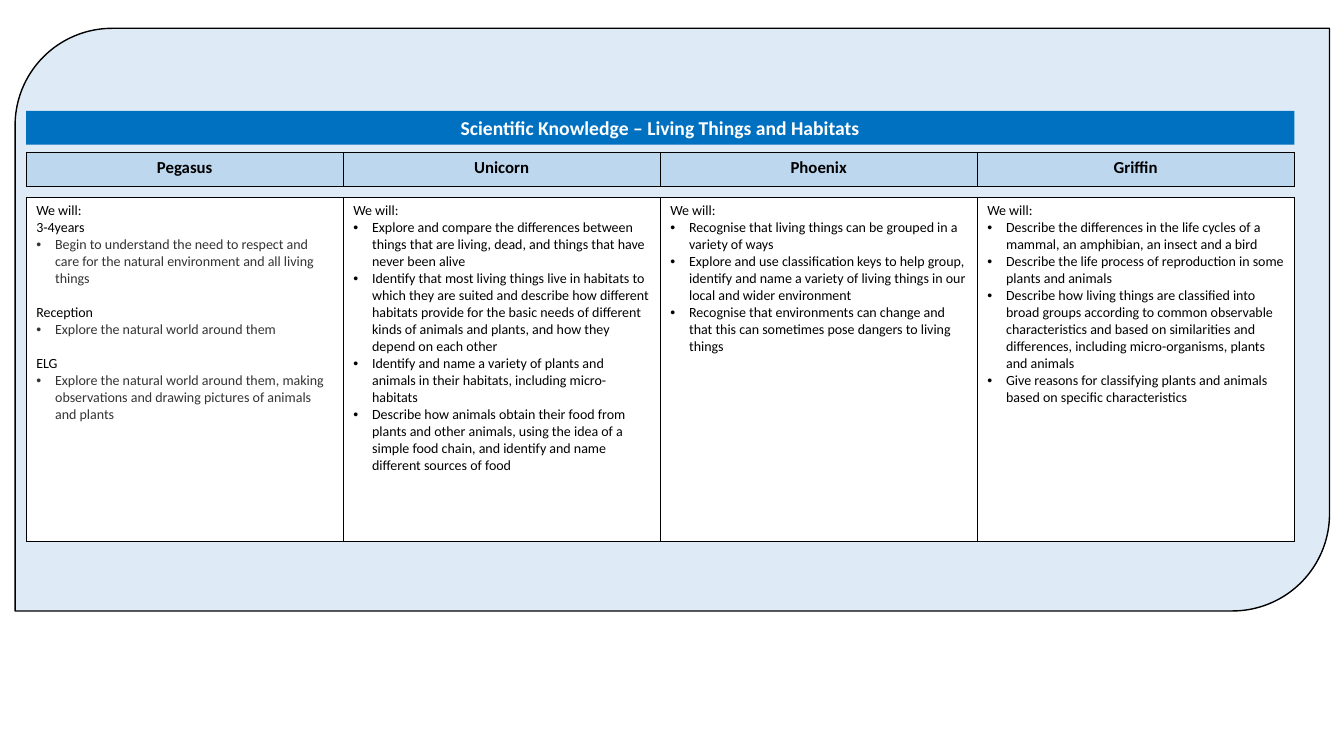
from lxml.etree import SubElement
from pptx import Presentation
from pptx.dml.color import RGBColor
from pptx.enum.shapes import MSO_SHAPE as Preset
from pptx.enum.text import MSO_ANCHOR as Anchor, PP_ALIGN as Align
from pptx.oxml.ns import qn
from pptx.util import Pt

FONT = "Calibri"
BLACK = "000000"
GREY = "333333"
WHITE = "FFFFFF"
INDENT = 13.5
LEFT, WIDTH = 18.7, 905.8

CLASSES = ["Pegasus", "Unicorn", "Phoenix", "Griffin"]

EARLY_YEARS = [
    ("3-4years", "Begin to understand the need to respect and care for the natural environment and all living things"),
    ("Reception", "Explore the natural world around them"),
    ("ELG", "Explore the natural world around them, making observations and drawing pictures of animals and plants"),
]

OBJECTIVES = [
    [
        "Explore and compare the differences between things that are living, dead, and things that have never been alive",
        "Identify that most living things live in habitats to which they are suited and describe how different habitats provide for the basic needs of different kinds of animals and plants, and how they depend on each other",
        "Identify and name a variety of plants and animals in their habitats, including micro-habitats",
        "Describe how animals obtain their food from plants and other animals, using the idea of a simple food chain, and identify and name different sources of food",
    ],
    [
        "Recognise that living things can be grouped in a variety of ways",
        "Explore and use classification keys to help group, identify and name a variety of living things in our local and wider environment",
        "Recognise that environments can change and that this can sometimes pose dangers to living things",
    ],
    [
        "Describe the differences in the life cycles of a mammal, an amphibian, an insect and a bird",
        "Describe the life process of reproduction in some plants and animals",
        "Describe how living things are classified into broad groups according to common observable characteristics and based on similarities and differences, including micro-organisms, plants and animals",
        "Give reasons for classifying plants and animals based on specific characteristics",
    ],
]


def color(value):
    return RGBColor.from_string(value)


def paint(target, value):
    target.fill.solid()
    target.fill.fore_color.rgb = color(value)


def write(paragraph, text, size, value=BLACK, bold=False):
    run = paragraph.add_run()
    run.text = text
    run.font.name = FONT
    run.font.size = Pt(size)
    run.font.bold = bold
    run.font.color.rgb = color(value)


def add_bullet(paragraph):
    properties = paragraph._p.get_or_add_pPr()
    properties.set("marL", str(Pt(INDENT)))
    properties.set("indent", str(-Pt(INDENT)))
    SubElement(properties, qn("a:buFont")).set("typeface", "Arial")
    SubElement(properties, qn("a:buChar")).set("char", "•")


def add_borders(cell):
    properties = cell._tc.get_or_add_tcPr()
    for position, side in enumerate(("a:lnL", "a:lnR", "a:lnT", "a:lnB")):
        line = properties.makeelement(qn(side), {"w": str(Pt(0.5))})
        fill = SubElement(line, qn("a:solidFill"))
        SubElement(fill, qn("a:srgbClr")).set("val", BLACK)
        properties.insert(position, line)


def add_panel(slide, left, top, width, height):
    panel = slide.shapes.add_shape(Preset.ROUND_2_DIAG_RECTANGLE, Pt(left), Pt(top), Pt(width), Pt(height))
    panel.shadow.inherit = False
    paint(panel, "DEEBF7")
    panel.line.color.rgb = color(BLACK)
    panel.line.width = Pt(1)


def add_banner(slide, left, top, width, height):
    banner = slide.shapes.add_shape(Preset.RECTANGLE, Pt(left), Pt(top), Pt(width), Pt(height))
    banner.shadow.inherit = False
    paint(banner, "0070C0")
    banner.line.fill.background()
    banner.text_frame.vertical_anchor = Anchor.MIDDLE
    paragraph = banner.text_frame.paragraphs[0]
    paragraph.alignment = Align.CENTER
    write(paragraph, "Scientific Knowledge – Living Things and Habitats", 14, WHITE, True)


def add_row(slide, left, top, width, height, fill):
    columns = len(CLASSES)
    table = slide.shapes.add_table(1, columns, Pt(left), Pt(top), Pt(width), Pt(height)).table
    table.first_row = False
    table.horz_banding = False
    for column in table.columns:
        column.width = Pt(width / columns)
    cells = list(table.iter_cells())
    for cell in cells:
        paint(cell, fill)
        add_borders(cell)
    return cells


def add_class_names(slide, left, top, width, height):
    for cell, name in zip(add_row(slide, left, top, width, height, "BDD7EE"), CLASSES):
        paragraph = cell.text_frame.paragraphs[0]
        paragraph.alignment = Align.CENTER
        write(paragraph, name, 12, bold=True)


def add_objectives(slide, left, top, width, height):
    cells = add_row(slide, left, top, width, height, WHITE)
    for cell in cells:
        write(cell.text_frame.paragraphs[0], "We will:", 10)

    early_years, *others = [cell.text_frame for cell in cells]
    for index, (stage, objective) in enumerate(EARLY_YEARS):
        heading = early_years.add_paragraph()
        heading.space_before = Pt(12.2 if index else 0)
        write(heading, stage, 10)
        paragraph = early_years.add_paragraph()
        add_bullet(paragraph)
        write(paragraph, objective, 10, GREY)

    for frame, objectives in zip(others, OBJECTIVES):
        for objective in objectives:
            paragraph = frame.add_paragraph()
            add_bullet(paragraph)
            write(paragraph, objective, 10)


def main():
    presentation = Presentation()
    presentation.slide_width = Pt(960)
    presentation.slide_height = Pt(540)
    slide = presentation.slides.add_slide(presentation.slide_layouts[6])
    add_panel(slide, 10.8, 20.2, 938.9, 416.2)
    add_banner(slide, LEFT, 79.2, WIDTH, 24.2)
    add_class_names(slide, LEFT, 108.7, WIDTH, 24.2)
    add_objectives(slide, LEFT, 141, WIDTH, 245.5)
    presentation.save("out.pptx")


if __name__ == "__main__":
    main()
